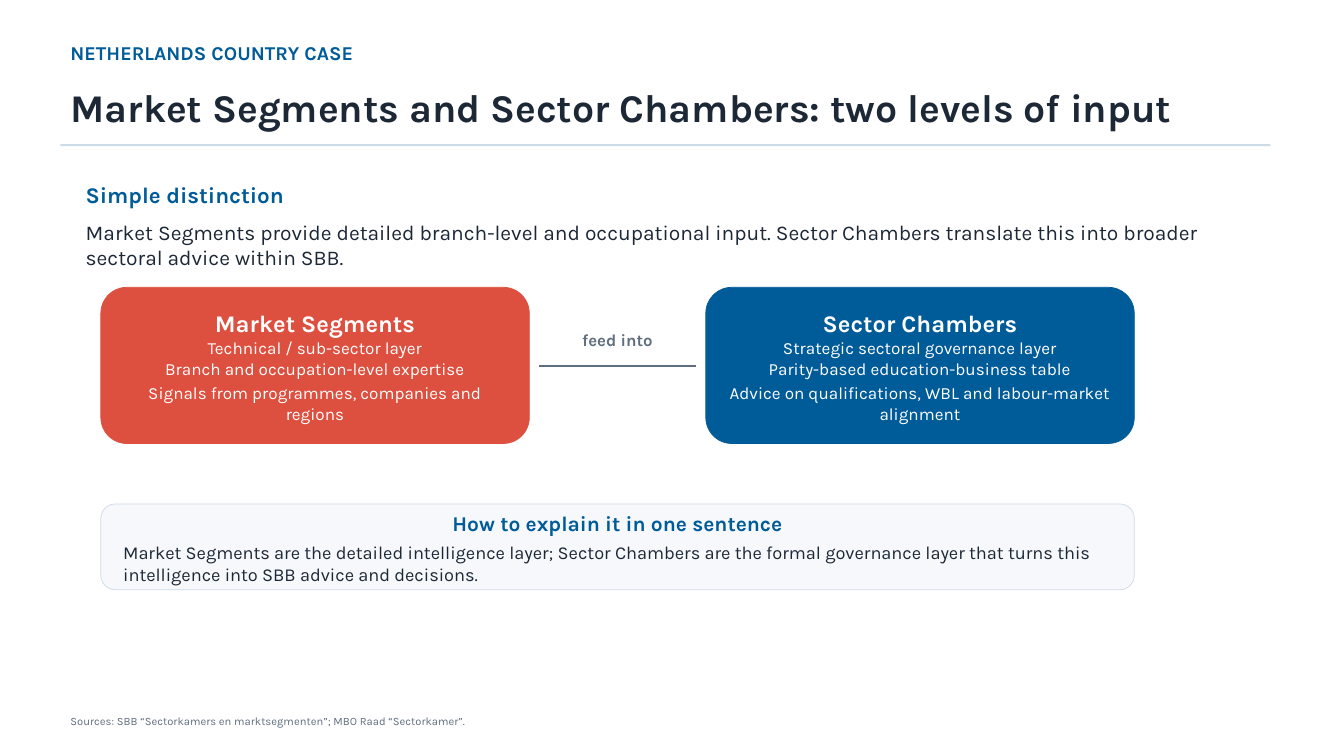
from dataclasses import dataclass

import lxml.etree
import pptx
import pptx.dml.color
import pptx.enum.shapes
import pptx.enum.text
import pptx.oxml.ns
import pptx.util

Inches = pptx.util.Inches
Pt = pptx.util.Pt
Align = pptx.enum.text.PP_ALIGN
Anchor = pptx.enum.text.MSO_ANCHOR
Kind = pptx.enum.shapes.MSO_SHAPE

FONT = "Karla"
INK = {
    "blue": "005B99",
    "dark": "1D2837",
    "red": "DD4F3E",
    "grey": "5F6E80",
    "rule": "CDDBE7",
    "pale": "F6F8FB",
    "white": "FFFFFF",
}


@dataclass
class Line:
    text: str
    size: float
    ink: str
    bold: bool = False
    align: Align = Align.LEFT
    gap: float = 0


@dataclass
class Label:
    left: float
    top: float
    width: float
    height: float
    line: Line


@dataclass
class Card:
    left: float
    ink: str
    title: str
    points: list[str]


def tint(name: str) -> pptx.dml.color.RGBColor:
    return pptx.dml.color.RGBColor.from_string(INK[name])


def place(shape, left: float, top: float, width: float, height: float) -> None:
    shape.left, shape.top = Inches(left), Inches(top)
    shape.width, shape.height = Inches(width), Inches(height)


def write(frame, lines: list[Line], anchor: Anchor = Anchor.TOP) -> None:
    """Fill a text frame with formatted, unbulleted lines."""
    frame.word_wrap = True
    frame.auto_size = pptx.enum.text.MSO_AUTO_SIZE.NONE
    frame.vertical_anchor = anchor
    frame.text = "\n".join(line.text for line in lines)
    for para, line in zip(frame.paragraphs, lines):
        props = para._p.get_or_add_pPr()
        props.set("marL", "0")
        props.set("indent", "0")
        lxml.etree.SubElement(props, pptx.oxml.ns.qn("a:buNone"))
        para.alignment = line.align
        para.space_before = Pt(line.gap)
        for run in para.runs:
            run.font.name = FONT
            run.font.size = Pt(line.size)
            run.font.bold = line.bold
            run.font.color.rgb = tint(line.ink)


def add_box(slide, kind: Kind, area: tuple[float, ...], fill: str, edge: str = ""):
    """Add a flat shape, with a thin edge if one is named."""
    box = slide.shapes.add_shape(kind, *map(Inches, area))
    box.shadow.inherit = False
    box.fill.solid()
    box.fill.fore_color.rgb = tint(fill)
    if edge:
        box.line.color.rgb = tint(edge)
        box.line.width = Pt(0.5)
    else:
        box.line.fill.background()
    return box


def inset(frame, side: float, top: float, base: float) -> None:
    frame.margin_left = frame.margin_right = Inches(side)
    frame.margin_top, frame.margin_bottom = Inches(top), Inches(base)


def add_label(slide, label: Label) -> None:
    box = slide.shapes.add_textbox(
        *map(Inches, (label.left, label.top, label.width, label.height)))
    write(box.text_frame, [label.line])


def add_card(slide, card: Card) -> None:
    box = add_box(slide, Kind.ROUNDED_RECTANGLE, (card.left, 2.85, 4.25, 1.55),
                  card.ink, card.ink)
    inset(box.text_frame, 0.12, 0.08, 0.06)
    lines = [Line(card.title, 17, "white", True, Align.CENTER)]
    lines += [Line(point, 12.2, "white", align=Align.CENTER) for point in card.points]
    lines[-1].gap = 3
    write(box.text_frame, lines, Anchor.MIDDLE)


def add_link(slide, start: float, end: float, top: float) -> None:
    link = slide.shapes.add_connector(
        pptx.enum.shapes.MSO_CONNECTOR.STRAIGHT,
        Inches(start), Inches(top), Inches(end), Inches(top))
    link.line.color.rgb = tint("grey")
    link.line.width = Pt(1.7)
    lxml.etree.SubElement(link._element.spPr, pptx.oxml.ns.qn("a:effectLst"))


LABELS = [
    Label(0.6, 0.36, 4.5, 0.32, Line("NETHERLANDS COUNTRY CASE", 14, "blue", True)),
    Label(5.45, 3.22, 1.35, 0.35, Line("feed into", 12, "grey", True, Align.CENTER)),
    Label(0.6, 7.04, 12.2, 0.26, Line(
        "Sources: SBB “Sectorkamers en marktsegmenten”; MBO Raad “Sectorkamer”.",
        8, "grey")),
]
CARDS = [
    Card(1, "red", "Market Segments", [
        "Technical / sub-sector layer",
        "Branch and occupation-level expertise",
        "Signals from programmes, companies and regions",
    ]),
    Card(7, "blue", "Sector Chambers", [
        "Strategic sectoral governance layer",
        "Parity-based education-business table",
        "Advice on qualifications, WBL and labour-market alignment",
    ]),
]


def main() -> None:
    deck = pptx.Presentation()
    deck.slide_width, deck.slide_height = Inches(13.33), Inches(7.5)
    slide = deck.slides.add_slide(deck.slide_layouts[1])

    # Title and rule
    title = slide.shapes.title
    place(title, 0.6, 0.78, 12.2, 0.58)
    write(title.text_frame, [
        Line("Market Segments and Sector Chambers: two levels of input", 28, "dark", True)])
    add_box(slide, Kind.RECTANGLE, (0.6, 1.43, 12, 0.02), "rule")

    # Lead text
    body = slide.placeholders[1]
    place(body, 0.75, 1.75, 11.5, 1)
    write(body.text_frame, [
        Line("Simple distinction", 16, "blue", True),
        Line("Market Segments provide detailed branch-level and occupational input. "
             "Sector Chambers translate this into broader sectoral advice within SBB.",
             15, "dark", gap=8),
    ])

    # Two levels and the link between them
    for card in CARDS:
        add_card(slide, card)
    add_link(slide, 5.35, 6.9, 3.63)

    # Summary
    note = add_box(slide, Kind.ROUNDED_RECTANGLE, (1, 5, 10.25, 0.85), "pale", "rule")
    inset(note.text_frame, 0.18, 0.12, 0.1)
    write(note.text_frame, [
        Line("How to explain it in one sentence", 15, "blue", True, Align.CENTER),
        Line("Market Segments are the detailed intelligence layer; Sector Chambers are "
             "the formal governance layer that turns this intelligence into SBB advice "
             "and decisions.", 13, "dark", gap=4),
    ], Anchor.MIDDLE)

    # Small labels
    for label in LABELS:
        add_label(slide, label)

    deck.save("out.pptx")


if __name__ == "__main__":
    main()
